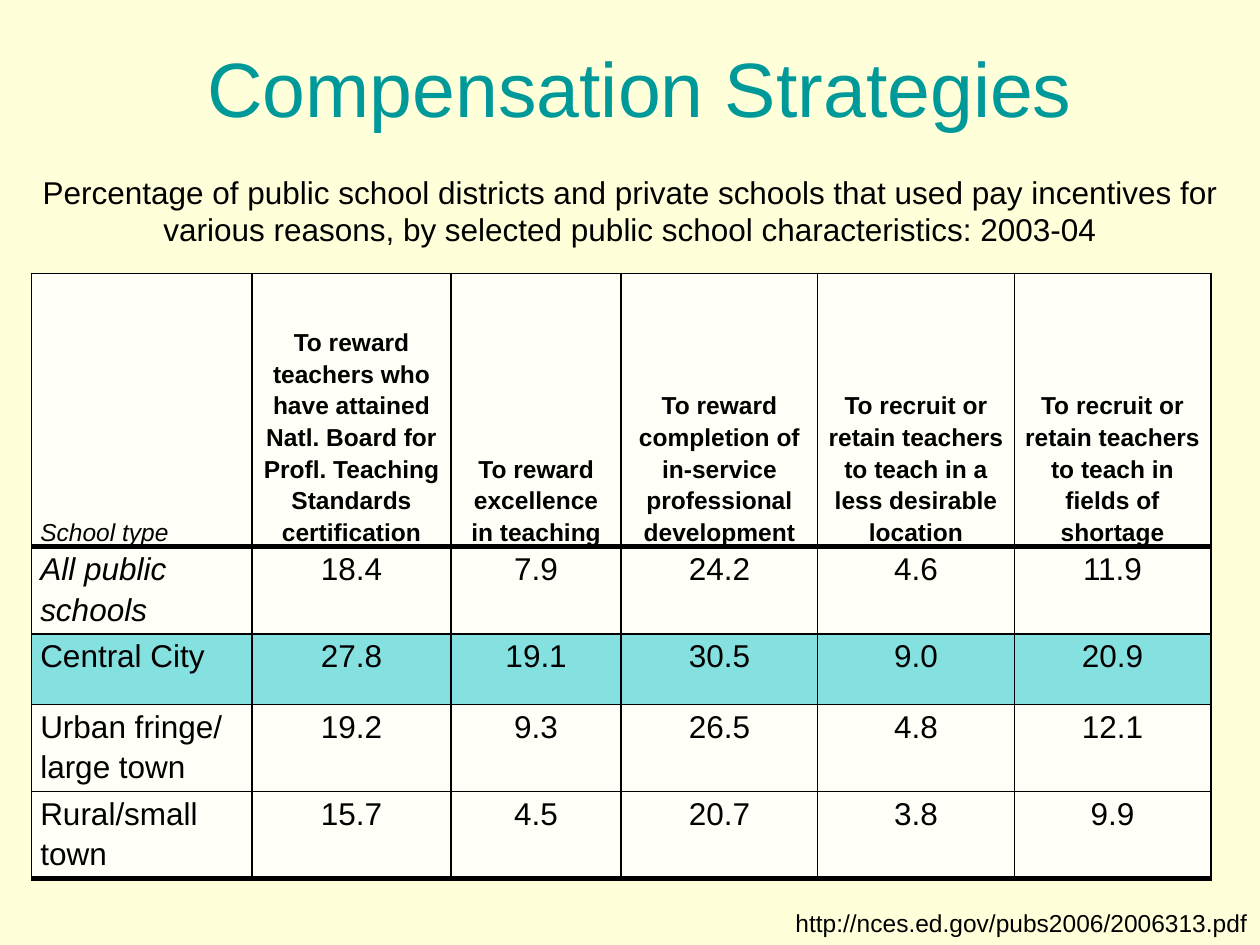
from lxml.etree import SubElement
from pptx import Presentation
from pptx.dml.color import RGBColor as Rgb
from pptx.enum.text import MSO_ANCHOR as Anchor, PP_ALIGN as Align
from pptx.oxml.ns import qn
from pptx.util import Inches, Pt

COLORS = {
    "background": "FFFFD9",
    "title": "009999",
    "ink": "000000",
    "cell": "FFFFF7",
    "highlight": "85E0E0",
}
FONT = "Arial"
GRID_COLUMNS, GRID_ROWS = 100, 75
UNIT = Inches(10) // GRID_COLUMNS

REASONS = [
    "To reward teachers who have attained Natl. Board for Profl. Teaching Standards certification",
    "To reward excellence in teaching",
    "To reward completion of in-service professional development",
    "To recruit or retain teachers to teach in a less desirable location",
    "To recruit or retain teachers to teach in fields of shortage",
]
SCHOOLS = [
    ("All public schools", 18.4, 7.9, 24.2, 4.6, 11.9),
    ("Central City", 27.8, 19.1, 30.5, 9.0, 20.9),
    ("Urban fringe/ large town", 19.2, 9.3, 26.5, 4.8, 12.1),
    ("Rural/small town", 15.7, 4.5, 20.7, 3.8, 9.9),
]
HIGHLIGHTED = "Central City"
COLUMN_WIDTHS = [17.5, 15.8, 13.5, 15.6, 15.6, 15.6]
ROW_HEIGHTS = [21.7, 6.9, 5.6, 6.9, 6.9]


def grid(*lengths):
    return [round(length * UNIT) for length in lengths]


def write(frame, text, size=18, color="ink", align=Align.CENTER,
          bold=False, italic=False, spacing=None):
    paragraph = frame.paragraphs[0]
    paragraph.alignment = align
    paragraph.line_spacing = spacing
    run = paragraph.add_run()
    run.text = text
    font = run.font
    font.name, font.size = FONT, Pt(size)
    font.bold, font.italic = bold, italic
    font.color.rgb = Rgb.from_string(COLORS[color])


def add_text(slide, box, text, wrap=True, top_inset=0.05, **style):
    frame = slide.shapes.add_textbox(*grid(*box)).text_frame
    frame.word_wrap = wrap
    frame.margin_top = Inches(top_inset)
    write(frame, text, **style)


def style_cell(cell, fill, top=1, bottom=1):
    cell.margin_left = cell.margin_right = Inches(0.07)
    cell.margin_top = cell.margin_bottom = 0
    properties = cell._tc.get_or_add_tcPr()
    for side, width in (("L", 1), ("R", 1), ("T", top), ("B", bottom)):
        border = SubElement(properties, qn(f"a:ln{side}"), w=str(Pt(width)))
        ink = SubElement(border, qn("a:solidFill"))
        SubElement(ink, qn("a:srgbClr"), val=COLORS["ink"])
    cell.fill.solid()
    cell.fill.fore_color.rgb = Rgb.from_string(COLORS[fill])


def add_incentives_table(slide, left, top):
    table = slide.shapes.add_table(
        len(ROW_HEIGHTS), len(COLUMN_WIDTHS),
        *grid(left, top, sum(COLUMN_WIDTHS), sum(ROW_HEIGHTS))).table
    table.first_row = table.horz_banding = False
    for column, width in zip(table.columns, grid(*COLUMN_WIDTHS)):
        column.width = width
    for row, height in zip(table.rows, grid(*ROW_HEIGHTS)):
        row.height = height

    for column, heading in enumerate(["School type", *REASONS]):
        cell = table.cell(0, column)
        is_label = column == 0
        style_cell(cell, "cell", bottom=3)
        cell.vertical_anchor = Anchor.BOTTOM
        write(cell.text_frame, heading, size=14, spacing=1.15,
              align=Align.LEFT if is_label else Align.CENTER,
              bold=not is_label, italic=is_label)

    for row, school in enumerate(SCHOOLS, 1):
        fill = "highlight" if school[0] == HIGHLIGHTED else "cell"
        for column, entry in enumerate(school):
            cell = table.cell(row, column)
            is_label = column == 0
            style_cell(cell, fill, top=3 if row == 1 else 1,
                       bottom=3 if row == len(SCHOOLS) else 1)
            write(cell.text_frame, str(entry), spacing=1.15,
                  align=Align.LEFT if is_label else Align.CENTER,
                  italic=is_label and row == 1)


def build_compensation_slide(deck):
    slide = deck.slides.add_slide(deck.slide_layouts[6])
    slide.background.fill.solid()
    slide.background.fill.fore_color.rgb = Rgb.from_string(COLORS["background"])
    add_text(slide, (62, 71.6, 38, 3.4), "http://nces.ed.gov/pubs2006/2006313.pdf",
             wrap=False, size=14, align=Align.RIGHT)
    add_text(slide, (2.1, 13.2, 95.8, 7.1),
             "Percentage of public school districts and private schools that used pay "
             "incentives for various reasons, by selected public school "
             "characteristics: 2003-04")
    add_incentives_table(slide, 2.5, 21.7)
    add_text(slide, (5.8, 2.3, 90, 10), "Compensation Strategies",
             top_inset=0.09, size=44, color="title")


def main():
    deck = Presentation()
    deck.slide_width = GRID_COLUMNS * UNIT
    deck.slide_height = GRID_ROWS * UNIT
    build_compensation_slide(deck)
    deck.save("out.pptx")


if __name__ == "__main__":
    main()
